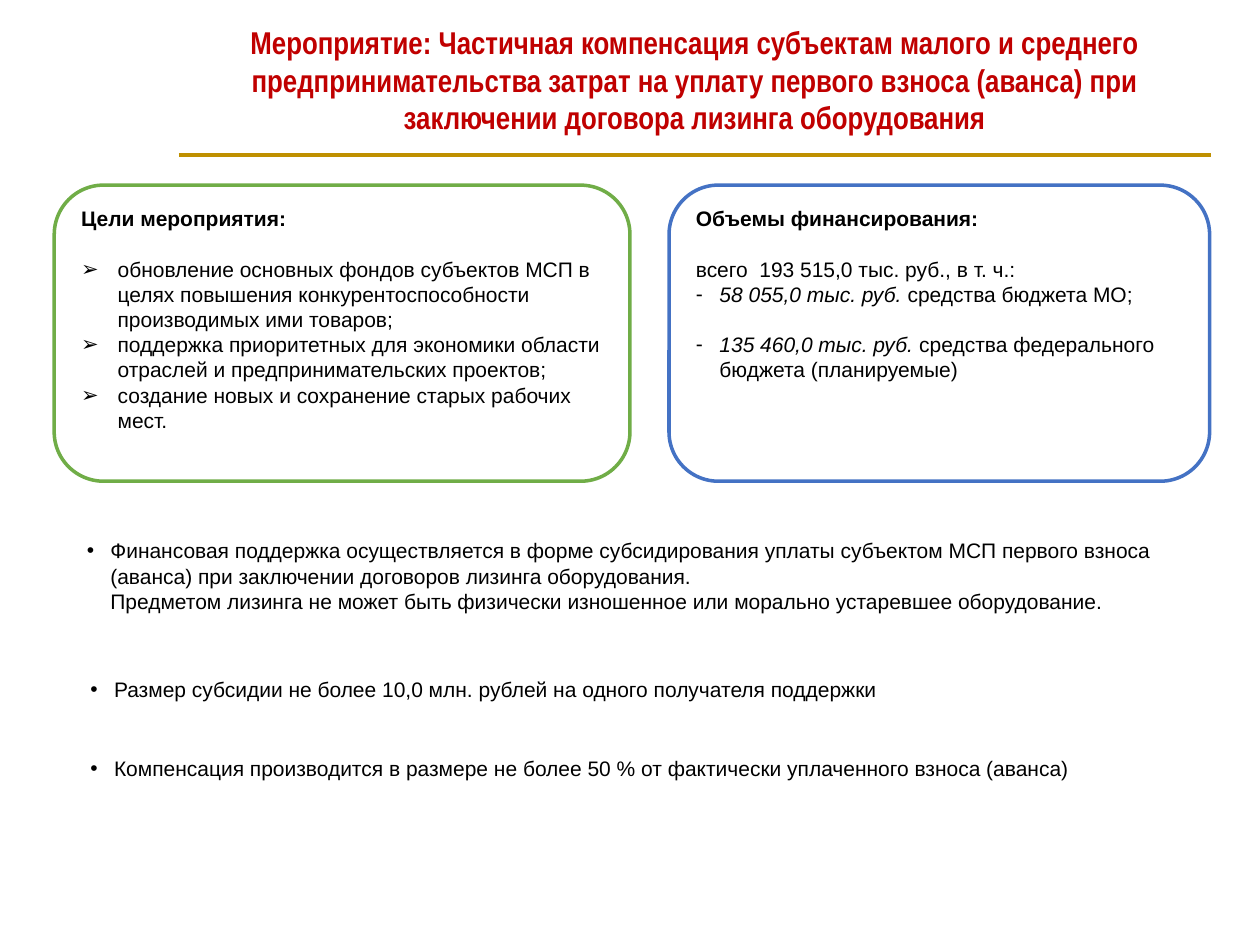
"""Build a slide on partial compensation of the first leasing payment."""
from dataclasses import dataclass

from lxml.etree import SubElement
from pptx import Presentation
from pptx.dml.color import RGBColor
from pptx.enum.shapes import MSO_CONNECTOR, MSO_SHAPE
from pptx.enum.text import MSO_ANCHOR, MSO_AUTO_SIZE, PP_ALIGN
from pptx.oxml.ns import qn
from pptx.util import Pt


@dataclass(frozen=True)
class Theme:
    """Colours, fonts and type sizes of the slide."""

    title: RGBColor = RGBColor(0xC0, 0x00, 0x00)
    text: RGBColor = RGBColor(0x00, 0x00, 0x00)
    paper: RGBColor = RGBColor(0xFF, 0xFF, 0xFF)
    rule: RGBColor = RGBColor(0xBF, 0x90, 0x00)
    goals: RGBColor = RGBColor(0x70, 0xAD, 0x47)
    funding: RGBColor = RGBColor(0x44, 0x72, 0xC4)
    title_font: str = "Arial Narrow"
    body_font: str = "Arial"
    title_size: float = 18
    body_size: float = 12
    line_width: float = 2
    blank_line: float = 14.4
    goal_indent: float = 20.9
    indent: float = 13.5


THEME = Theme()


def prepare_frame(tf):
    """Make a text frame wrap from the top at a fixed size."""
    tf.word_wrap = True
    tf.auto_size = MSO_AUTO_SIZE.NONE
    tf.vertical_anchor = MSO_ANCHOR.TOP
    return tf


def add_run(p, text, font=THEME.body_font, size=THEME.body_size,
            color=THEME.text, bold=False, italic=False):
    """Append one formatted run to a paragraph."""
    r = p.add_run()
    r.text = text
    r.font.name, r.font.size = font, Pt(size)
    r.font.bold, r.font.italic = bold, italic
    r.font.color.rgb = color


def add_paragraph(tf, *runs, bullet=None, indent=0, before=0):
    """Append a paragraph of (text, style) runs, hanging when bulleted."""
    p = tf.paragraphs[0]
    if p.runs:
        p = tf.add_paragraph()
    p.alignment = PP_ALIGN.LEFT
    if before:
        p.space_before = Pt(before)
    pPr = p._p.get_or_add_pPr()
    pPr.set("marL", str(Pt(indent)))
    if bullet:
        pPr.set("indent", str(-Pt(indent)))
        SubElement(pPr, qn("a:buFont"), typeface=THEME.body_font)
        SubElement(pPr, qn("a:buChar"), char=bullet)
    for text, style in runs:
        add_run(p, text, **style)


def add_title(s, text, left, top, width, height):
    """Place and format the slide title."""
    sp = s.shapes.title
    sp.left, sp.top, sp.width, sp.height = map(Pt, (left, top, width, height))
    p = prepare_frame(sp.text_frame).paragraphs[0]
    p.alignment = PP_ALIGN.CENTER
    add_run(p, text, THEME.title_font, THEME.title_size, THEME.title, bold=True)


def add_rule(s, left, y, width):
    """Draw the horizontal rule under the title."""
    line = s.shapes.add_connector(
        MSO_CONNECTOR.STRAIGHT, Pt(left), Pt(y), Pt(left + width), Pt(y))
    line.line.color.rgb = THEME.rule
    line.line.width = Pt(THEME.line_width)
    SubElement(line._element.spPr, qn("a:effectLst"))


def add_panel(s, heading, color, left, width):
    """Draw an outlined rounded panel with a heading and return its frame."""
    sp = s.shapes.add_shape(
        MSO_SHAPE.ROUNDED_RECTANGLE, Pt(left), Pt(105.8), Pt(width), Pt(169.2))
    sp.shadow.inherit = False
    sp.fill.solid()
    sp.fill.fore_color.rgb = THEME.paper
    sp.line.color.rgb = color
    sp.line.width = Pt(THEME.line_width)
    tf = prepare_frame(sp.text_frame)
    add_paragraph(tf, (heading, {"bold": True}))
    return tf


def add_note(s, text, left, top, width, height):
    """Add a bulleted note and return its text frame."""
    sp = s.shapes.add_textbox(Pt(left), Pt(top), Pt(width), Pt(height))
    tf = prepare_frame(sp.text_frame)
    add_paragraph(tf, (text, {}), bullet="•", indent=THEME.indent)
    return tf


def add_goals(s):
    """Add the panel of goals."""
    tf = add_panel(s, "Цели мероприятия:", THEME.goals, 31, 329)
    goals = (
        "обновление основных фондов субъектов МСП в целях повышения "
        "конкурентоспособности производимых ими товаров;",
        "поддержка приоритетных для экономики области отраслей и "
        "предпринимательских проектов;",
        "создание новых и сохранение старых рабочих мест.",
    )
    for i, goal in enumerate(goals):
        add_paragraph(tf, (goal, {}), bullet="➢", indent=THEME.goal_indent,
                      before=0 if i else THEME.blank_line)


def add_funding(s):
    """Add the panel of funding volumes."""
    tf = add_panel(s, "Объемы финансирования:", THEME.funding, 382.3, 308.9)
    add_paragraph(tf, ("всего  193 515,0 тыс. руб., в т. ч.:", {}),
                  before=THEME.blank_line)
    sources = (
        ("58 055,0 тыс. руб.", " средства бюджета МО;", 0),
        ("135 460,0 тыс. руб.", " средства федерального бюджета (планируемые)",
         THEME.blank_line),
    )
    for amount, source, before in sources:
        add_paragraph(tf, (amount, {"italic": True}), (source, {}),
                      bullet="-", indent=THEME.indent, before=before)


def add_notes_on_terms(s):
    """Add the notes on the terms of support."""
    tf = add_note(
        s, "Финансовая поддержка осуществляется в форме субсидирования уплаты "
        "субъектом МСП первого взноса (аванса) при заключении договоров "
        "лизинга оборудования.", 42.5, 303.8, 668.9, 51.1)
    add_paragraph(
        tf, ("Предметом лизинга не может быть физически изношенное или "
             "морально устаревшее оборудование.", {}), indent=THEME.indent)
    add_note(s, "Размер субсидии не более 10,0 млн. рублей на одного "
             "получателя поддержки", 44.6, 383, 617.8, 21.6)
    add_note(s, "Компенсация производится в размере не более 50 % от "
             "фактически уплаченного взноса (аванса)", 44.6, 428.4, 615.6, 21.6)


def main():
    """Build and save the slide."""
    prs = Presentation()
    prs.slide_width, prs.slide_height = Pt(720), Pt(540)
    s = prs.slides.add_slide(prs.slide_layouts[5])
    add_title(
        s, "Мероприятие: Частичная компенсация субъектам малого и среднего "
        "предпринимательства затрат на уплату первого взноса (аванса) при "
        "заключении договора лизинга оборудования", 102.2, 9.4, 589.7, 72.7)
    add_rule(s, 102.2, 88.6, 589.7)
    add_goals(s)
    add_funding(s)
    add_notes_on_terms(s)
    prs.save("out.pptx")


if __name__ == "__main__":
    main()
